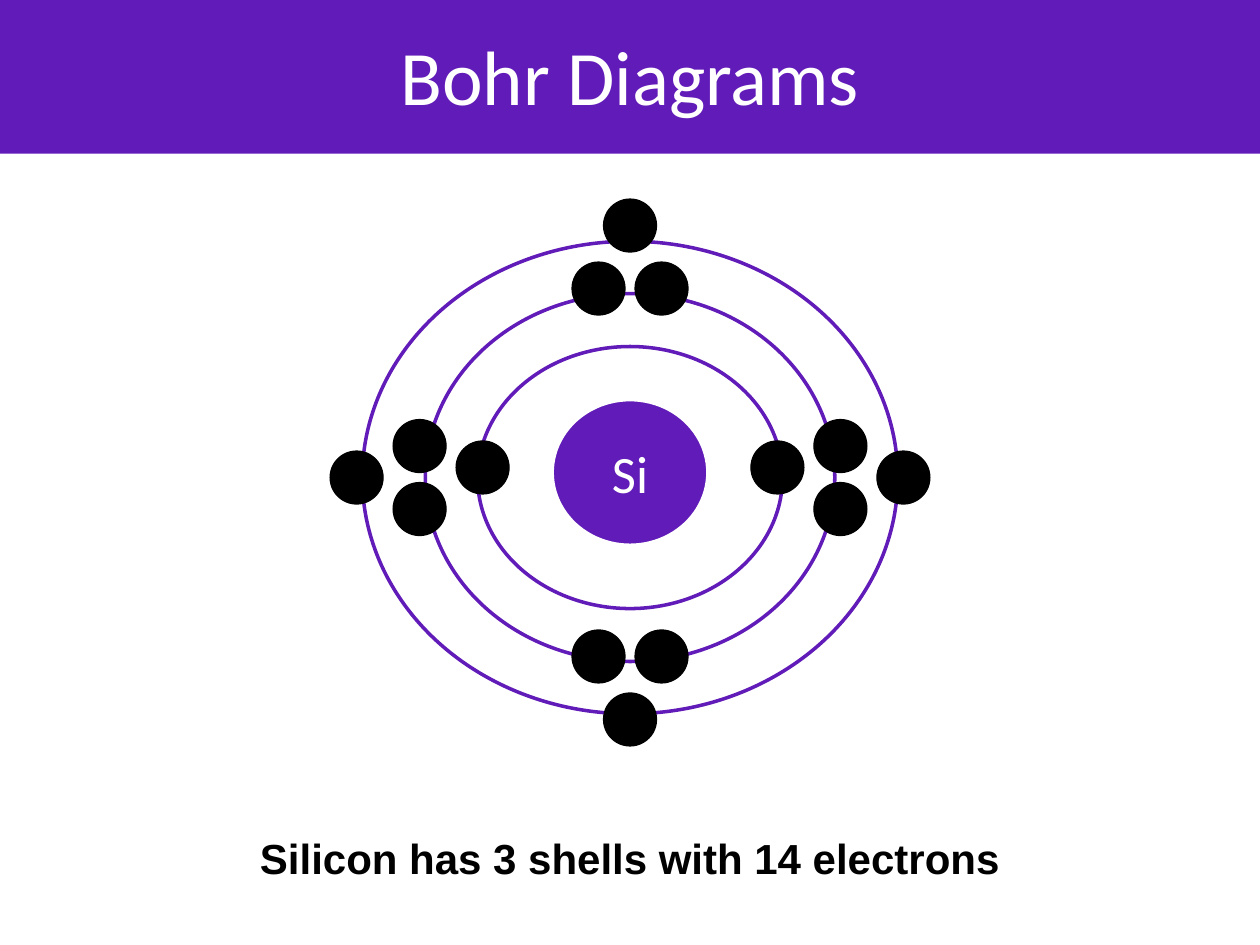
from pptx import Presentation
from pptx.dml.color import RGBColor
from pptx.enum.shapes import MSO_SHAPE
from pptx.enum.text import MSO_ANCHOR, PP_ALIGN
from pptx.util import Inches, Pt

OVAL = MSO_SHAPE.OVAL
MIDDLE = MSO_ANCHOR.MIDDLE
CENTER = PP_ALIGN.CENTER

COLORS = {"purple": "611BB8", "white": "FFFFFF", "black": "000000"}

CENTER_X = 5
SHELL_Y = 3.79
NUCLEUS_Y = 3.75
ELECTRON_SIZE = 0.42
PAIR_OFFSET = 0.25

# Width and height of each shell, outermost first
SHELLS = [(4.25, 3.75), (3.25, 2.92), (2.42, 2.08)]


def color(name):
    return RGBColor.from_string(COLORS[name])


def add_oval(page, center_x, center_y, width, height, fill, line, line_width):
    oval = page.shapes.add_shape(
        OVAL, Inches(center_x - width / 2), Inches(center_y - height / 2),
        Inches(width), Inches(height))
    oval.shadow.inherit = False
    oval.fill.solid()
    oval.fill.fore_color.rgb = color(fill)
    oval.line.color.rgb = color(line)
    oval.line.width = Pt(line_width)
    return oval


def write_text(shape, text, font, size, ink, bold=False, inset=0.1):
    frame = shape.text_frame
    frame.text = text
    frame.word_wrap = True
    frame.vertical_anchor = MIDDLE
    frame.margin_left = frame.margin_right = Inches(0.1)
    frame.margin_top = frame.margin_bottom = Inches(inset)
    para = frame.paragraphs[0]
    para.alignment = CENTER
    span = para.runs[0]
    span.font.name = font
    span.font.size = Pt(size)
    span.font.bold = bold
    span.font.color.rgb = color(ink)


def add_title(page, text):
    title = page.shapes.title
    title.left, title.top = Inches(0), Inches(-0.03)
    title.width, title.height = Inches(10), Inches(1.25)
    title.fill.solid()
    title.fill.fore_color.rgb = color("purple")
    write_text(title, text, "Calibri", 44, "white")


def add_caption(page, text):
    box = page.shapes.add_textbox(Inches(0.5), Inches(6.46), Inches(9), Inches(0.7))
    write_text(box, text, "Arial", 24, "black", bold=True)


def electron_centers():
    centers = []
    for side in (-1, 1):
        # Inner shell: one electron on each side
        centers.append((CENTER_X + side * 1.17, 3.71))
        # Middle shell: a pair at each of four points
        for offset in (-PAIR_OFFSET, PAIR_OFFSET):
            centers.append((CENTER_X + side * 1.67, SHELL_Y + offset))
            centers.append((CENTER_X + offset, NUCLEUS_Y + side * 1.46))
        # Outer shell: one electron at each of four points
        centers.append((CENTER_X + side * 2.17, SHELL_Y))
        centers.append((CENTER_X, NUCLEUS_Y + side * 1.96))
    return centers


def main():
    deck = Presentation()
    deck.slide_width, deck.slide_height = Inches(10), Inches(7.5)
    page = deck.slides.add_slide(deck.slide_layouts[5])

    add_title(page, "Bohr Diagrams")

    # Shells and nucleus
    for width, height in SHELLS:
        add_oval(page, CENTER_X, SHELL_Y, width, height, "white", "purple", 2)
    nucleus = add_oval(page, CENTER_X, NUCLEUS_Y, 1.25, 1.17, "purple", "white", 3)
    write_text(nucleus, "Si", "Calibri", 30, "white", inset=0.05)

    # Electrons
    for x, y in electron_centers():
        add_oval(page, x, y, ELECTRON_SIZE, ELECTRON_SIZE, "black", "black", 0.75)

    add_caption(page, "Silicon has 3 shells with 14 electrons")
    deck.save("out.pptx")


if __name__ == "__main__":
    main()
